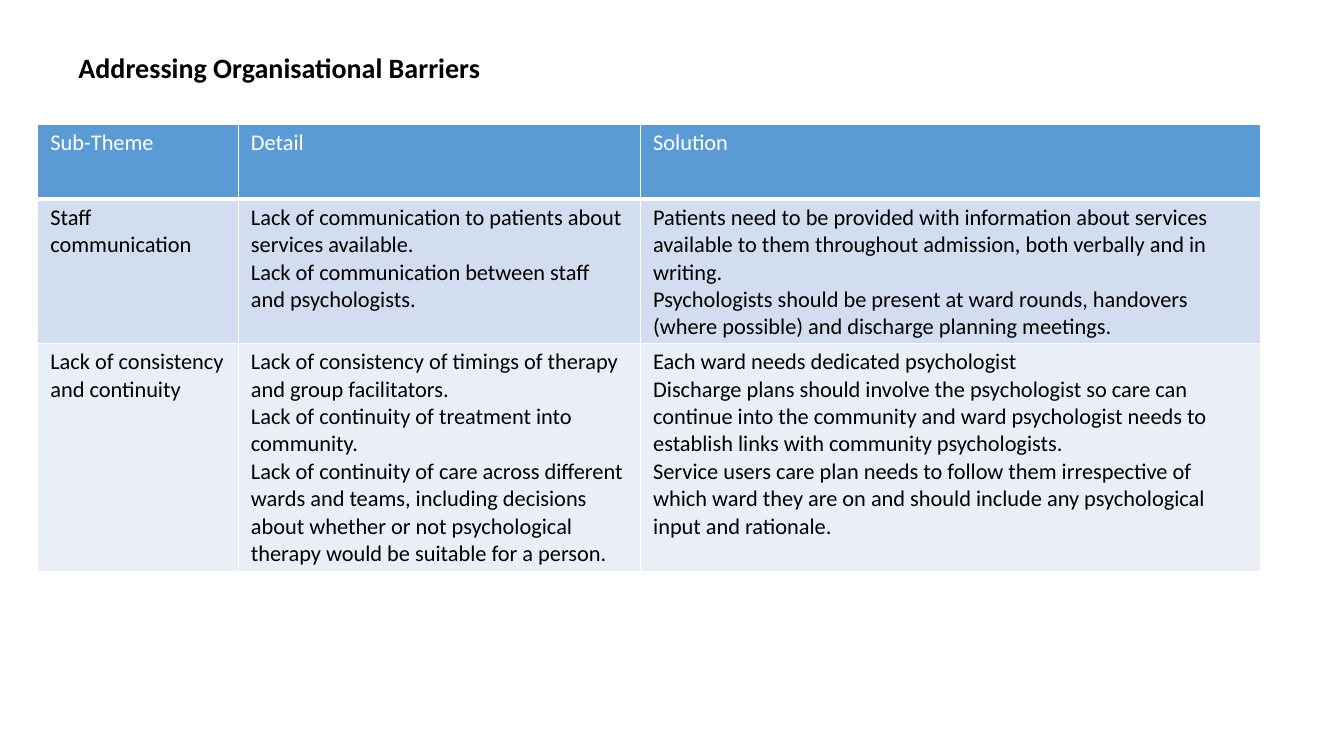
from lxml import etree
from pptx import Presentation
from pptx.dml.color import RGBColor
from pptx.enum.text import MSO_ANCHOR
from pptx.oxml.ns import qn
from pptx.util import Pt

MIDDLE = MSO_ANCHOR.MIDDLE
TOP = MSO_ANCHOR.TOP
WHITE, BLACK, BLUE = "FFFFFF", "000000", "5B9BD5"
BANDS = ["D2DEEF", "EAEFF7"]
COLUMN_WIDTHS = [143.3, 287.3, 442.8]
ROW_HEIGHTS = [53.3, 102.2, 163]
BARRIERS = [
    ["Sub-Theme", "Detail", "Solution"],
    [
        "Staff communication",
        "Lack of communication to patients about services available.\n"
        "Lack of communication between staff and psychologists.",
        "Patients need to be provided with information about services available to them "
        "throughout admission, both verbally and in writing.\n"
        "Psychologists should be present at ward rounds, handovers (where possible) "
        "and discharge planning meetings.",
    ],
    [
        "Lack of consistency and continuity",
        "Lack of consistency of timings of therapy and group facilitators.\n"
        "Lack of continuity of treatment into community.\n"
        "Lack of continuity of care across different wards and teams, including decisions "
        "about whether or not psychological therapy would be suitable for a person.",
        "Each ward needs dedicated psychologist\n"
        "Discharge plans should involve the psychologist so care can continue into the "
        "community and ward psychologist needs to establish links with community psychologists.\n"
        "Service users care plan needs to follow them irrespective of which ward they are on "
        "and should include any psychological input and rationale.",
    ],
]


def color(value):
    """Turn a hex string into a colour."""
    return RGBColor.from_string(value)


class SlideBuilder:
    """Hold the style and the current slide."""

    def __init__(self, slide, font="Calibri"):
        """Remember the slide and its font."""
        self.slide = slide
        self.font = font

    def add_text(self, frame, text, size=16, fill=BLACK, bold=False, line_spacing=1.0):
        """Add one paragraph for each line of the text."""
        frame.word_wrap = True
        for index, line in enumerate(text.split("\n")):
            paragraph = frame.add_paragraph() if index else frame.paragraphs[0]
            paragraph.line_spacing = line_spacing
            run = paragraph.add_run()
            run.text = line
            run.font.name = self.font
            run.font.size = Pt(size)
            run.font.bold = bold
            run.font.color.rgb = color(fill)

    def title(self, text, left, top, width, height):
        """Add the slide heading."""
        shape = self.slide.shapes.add_textbox(Pt(left), Pt(top), Pt(width), Pt(height))
        shape.text_frame.vertical_anchor = MIDDLE
        self.add_text(shape.text_frame, text, size=20, bold=True, line_spacing=0.9)

    def border(self, cell, side, width):
        """Draw one white side of a cell."""
        properties = cell._tc.get_or_add_tcPr()
        line = etree.SubElement(properties, qn("a:ln" + side), w=str(Pt(width)))
        fill = etree.SubElement(line, qn("a:solidFill"))
        etree.SubElement(fill, qn("a:srgbClr"), val=WHITE)

    def cell(self, cell, text, fill, text_color, bottom):
        """Fill, frame and label one table cell."""
        for side, width in zip("LRTB", [1, 1, 1, bottom]):
            self.border(cell, side, width)
        cell.fill.solid()
        cell.fill.fore_color.rgb = color(fill)
        cell.vertical_anchor = TOP
        cell.margin_left = cell.margin_right = Pt(9.2)
        cell.margin_top = cell.margin_bottom = Pt(3.6)
        self.add_text(cell.text_frame, text, fill=text_color)

    def table(self, rows, left, top, widths, heights):
        """Add a table with a header and banded rows."""
        table = self.slide.shapes.add_table(
            len(rows), len(widths), Pt(left), Pt(top), Pt(sum(widths)), Pt(sum(heights))
        ).table
        for column, width in zip(table.columns, widths):
            column.width = Pt(width)
        for index, (row, height, texts) in enumerate(zip(table.rows, heights, rows)):
            row.height = Pt(height)
            if index == 0:
                style = (BLUE, WHITE, 3)
            else:
                style = (BANDS[(index - 1) % len(BANDS)], BLACK, 1)
            for cell, text in zip(row.cells, texts):
                self.cell(cell, text, *style)


def main():
    """Build and save the slide."""
    presentation = Presentation()
    presentation.slide_width, presentation.slide_height = Pt(960), Pt(540)
    builder = SlideBuilder(presentation.slides.add_slide(presentation.slide_layouts[6]))
    builder.title("Addressing Organisational Barriers", 49, 4.3, 864, 90)
    builder.table(BARRIERS, 26.8, 88.8, COLUMN_WIDTHS, ROW_HEIGHTS)
    presentation.save("out.pptx")


if __name__ == "__main__":
    main()
